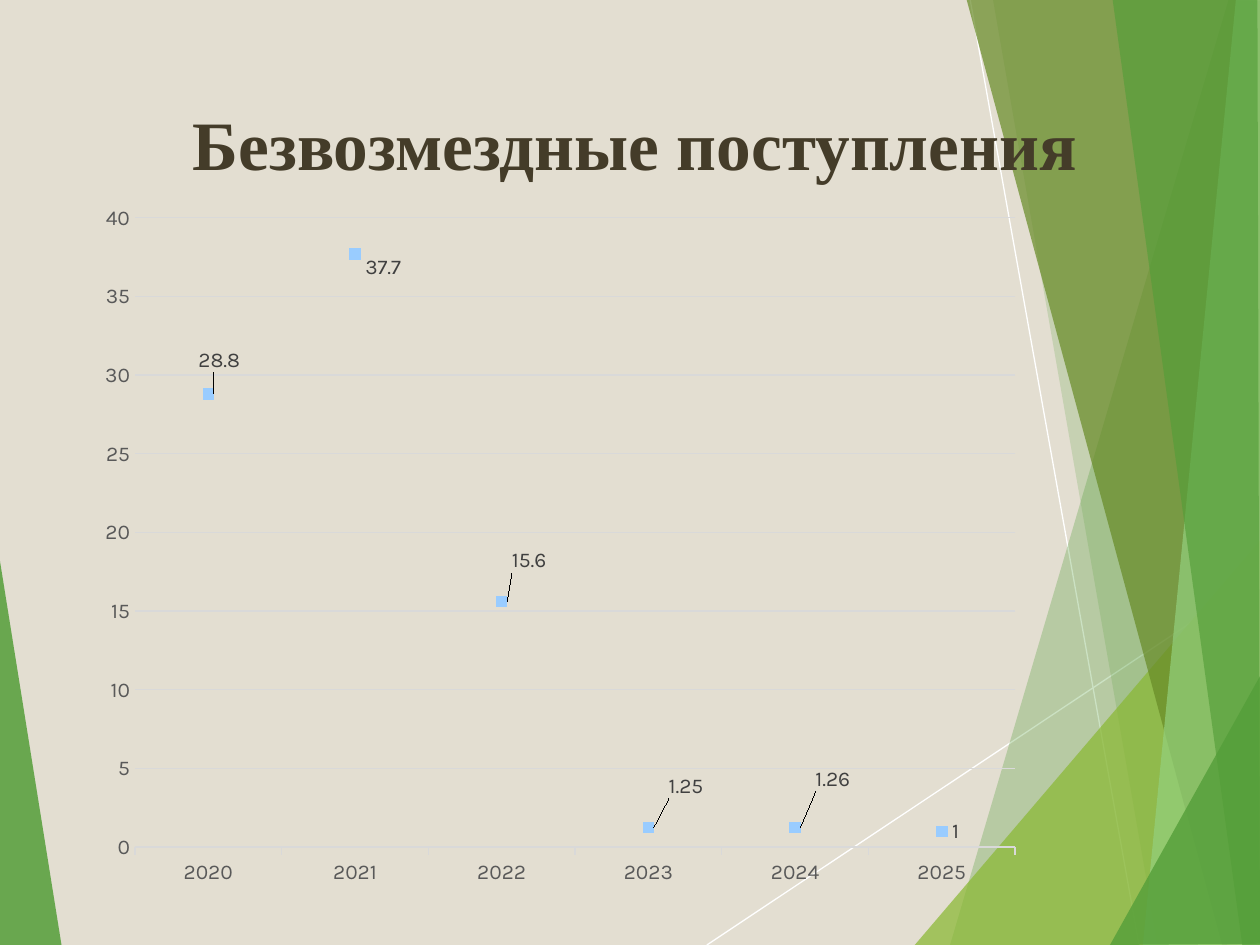
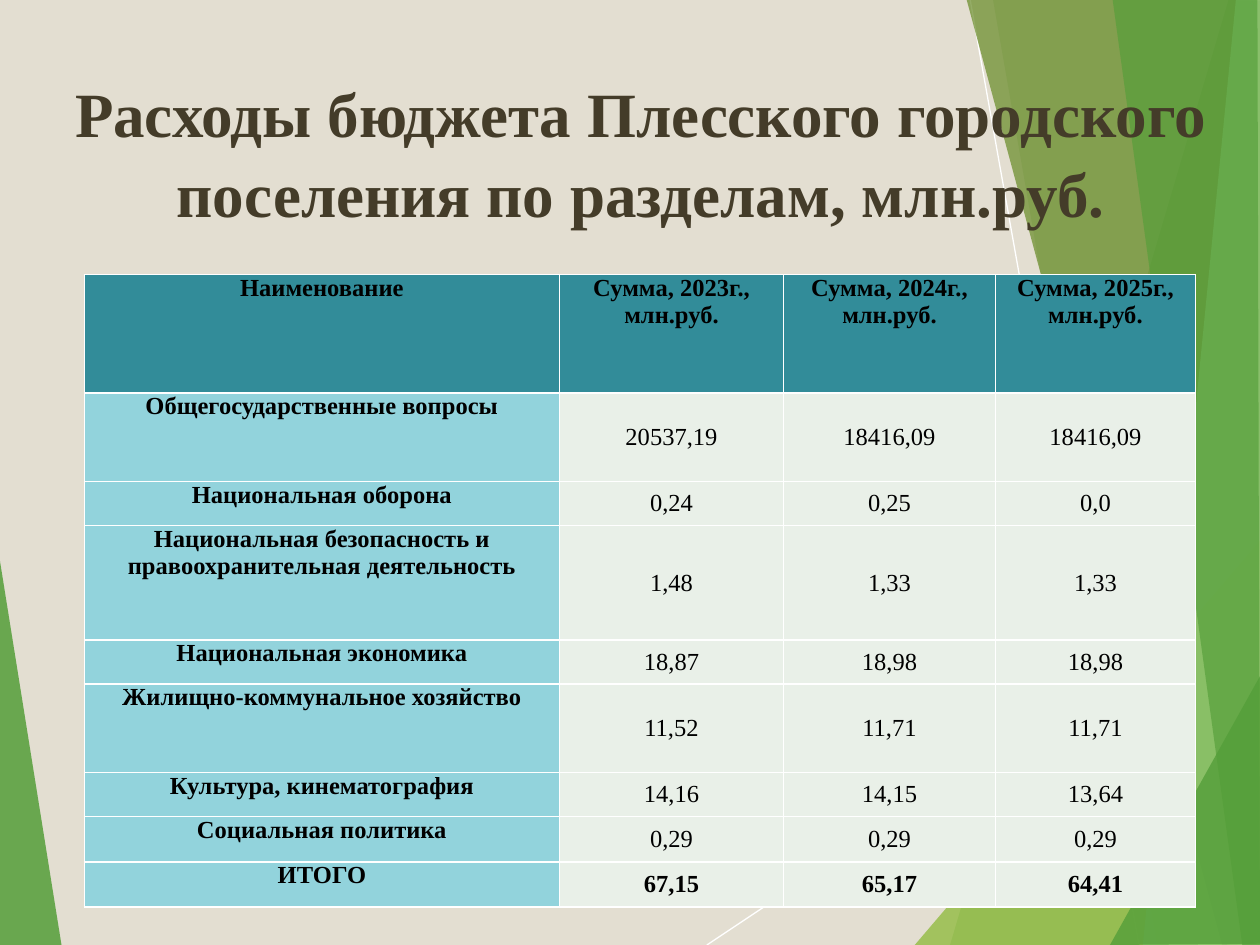
from dataclasses import dataclass

from lxml import etree
from pptx import Presentation
from pptx.chart.data import CategoryChartData
from pptx.dml.color import RGBColor
from pptx.enum.chart import XL_CHART_TYPE, XL_LABEL_POSITION, XL_MARKER_STYLE, XL_TICK_MARK
from pptx.enum.shapes import MSO_CONNECTOR
from pptx.enum.text import MSO_ANCHOR, MSO_AUTO_SIZE, PP_ALIGN
from pptx.oxml.ns import qn
from pptx.util import Inches, Pt

CENTER = PP_ALIGN.CENTER
TOP, MIDDLE = MSO_ANCHOR.TOP, MSO_ANCHOR.MIDDLE
NO_AUTOFIT = MSO_AUTO_SIZE.NONE
LINE_MARKERS = XL_CHART_TYPE.LINE_MARKERS
SQUARE = XL_MARKER_STYLE.SQUARE
LABEL_RIGHT = XL_LABEL_POSITION.RIGHT
TICK_NONE, TICK_OUT = XL_TICK_MARK.NONE, XL_TICK_MARK.OUTSIDE
STRAIGHT = MSO_CONNECTOR.STRAIGHT


@dataclass(frozen=True)
class Theme:
    background: str = "E3DED1"
    title: str = "443C29"
    white: str = "FFFFFF"
    black: str = "000000"
    green: str = "549E39"
    lime: str = "8AB833"
    olive: str = "678A26"
    mint: str = "93D07D"
    marker: str = "99CCFF"
    grid: str = "D9D9D9"
    axis_text: str = "595959"
    label_text: str = "404040"
    table_head: str = "328C99"
    table_name: str = "92D3DC"
    table_value: str = "E9F0E8"
    serif: str = "Times New Roman"
    sans: str = "Karla"
    grants_title_size: float = 39.6
    spending_title_size: float = 36
    table_size: float = 14
    chart_size: float = 12
    hairline: float = 0.75


THEME = Theme()

# Shared background: line ends, then ribbons as colour, opacity %, corners
LINES = [((5.61, 7.5), (10.01, 4.57)), ((7.7, 0), (9.04, 7.5))]
RIBBONS = [
    (THEME.green, 85, [(-0.01, 4.39), (0.49, 7.51), (-0.01, 7.5)]),
    (THEME.green, 30, [(9.75, 0), (7.54, 7.5), (10.02, 7.51), (10.01, 0.01)]),
    (THEME.green, 20, [(7.88, -0.01), (9.19, 7.5), (10.01, 7.5), (10.01, -0.01)]),
    (THEME.lime, 72, [(7.26, 7.5), (10, 4.29), (10.01, 7.5)]),
    (THEME.olive, 70, [(7.67, -0.01), (9.7, 7.5), (10.01, 7.49), (10.01, -0.01)]),
    (THEME.mint, 70, [(9.81, -0.01), (9.07, 7.5), (10.01, 7.5), (10, -0.01)]),
    (THEME.green, 65, [(8.83, -0.01), (9.86, 7.5), (10, 7.5), (9.98, -0.01)]),
    (THEME.green, 80, [(8.81, 7.5), (10.01, 5.35), (10.01, 7.49)]),
]

# Slide 1: grants
GRANTS_TITLE = "Безвозмездные поступления"
GRANTS = {"2020": 28.8, "2021": 37.7, "2022": 15.6, "2023": 1.25, "2024": 1.26, "2025": 1}
PLOT_LAYOUT = {"layoutTarget": "inner", "xMode": "edge", "yMode": "edge",
               "x": 0.05, "y": 0.02, "w": 0.87, "h": 0.92}
LABEL_SHIFTS = [(-0.02, -0.05), (0, 0.02), (0, -0.06), (0.01, -0.06), (0.01, -0.07)]

# Slide 2: spending
SPENDING_TITLE = "Расходы бюджета Плесского городского поселения по разделам, млн.руб."
SPENDING = [
    ("Наименование", "Сумма, 2023г., млн.руб.", "Сумма, 2024г., млн.руб.", "Сумма, 2025г., млн.руб."),
    ("Общегосударственные вопросы", "20537,19", "18416,09", "18416,09"),
    ("Национальная оборона", "0,24", "0,25", "0,0"),
    ("Национальная безопасность и правоохранительная деятельность", "1,48", "1,33", "1,33"),
    ("Национальная экономика", "18,87", "18,98", "18,98"),
    ("Жилищно-коммунальное хозяйство", "11,52", "11,71", "11,71"),
    ("Культура, кинематография", "14,16", "14,15", "13,64"),
    ("Социальная политика", "0,29", "0,29", "0,29"),
    ("ИТОГО", "67,15", "65,17", "64,41"),
]
COLUMN_WIDTHS = [3.77, 1.78, 1.68, 1.59]
ROW_HEIGHTS = [0.94, 0.7, 0.35, 0.91, 0.35, 0.7, 0.35, 0.36, 0.36]


def rgb(color):
    return RGBColor.from_string(color)


def inches(*lengths):
    return [Inches(length) for length in lengths]


def paint(target, color):
    target.fill.solid()
    target.fill.fore_color.rgb = rgb(color)


def set_font(font, name, size, color, bold=False):
    font.name, font.size, font.bold = name, Pt(size), bold
    font.color.rgb = rgb(color)


def set_line(line, color):
    line.color.rgb = rgb(color)
    line.width = Pt(THEME.hairline)


def draw_background(page):
    """Draw the lines and ribbons and return their elements."""
    elements = []
    for start, end in LINES:
        line = page.shapes.add_connector(STRAIGHT, *inches(*start, *end))
        set_line(line.line, THEME.white)
        etree.SubElement(line.element.spPr, qn("a:effectLst"))
        elements.append(line.element)
    for color, opacity, corners in RIBBONS:
        first, *others = [inches(*corner) for corner in corners]
        builder = page.shapes.build_freeform(*first)
        builder.add_line_segments(others)
        ribbon = builder.convert_to_shape()
        ribbon.shadow.inherit = False
        ribbon.line.fill.background()
        paint(ribbon, color)
        color_element = ribbon.element.spPr.find(qn("a:solidFill"))[0]
        etree.SubElement(color_element, qn("a:alpha"), val=str(opacity * 1000))
        elements.append(ribbon.element)
    return elements


def set_up_layout(layout, page):
    """Place the shared background behind the layout's title."""
    paint(layout.background, THEME.background)
    title_index = 0
    for holder in list(layout.placeholders):
        if holder.placeholder_format.idx != title_index:
            holder.element.getparent().remove(holder.element)
    title_element = layout.placeholders[0].element
    for element in draw_background(page):
        title_element.addprevious(element)


def set_title(page, text, place, size):
    box = page.shapes.title
    box.left, box.top, box.width, box.height = inches(*place)
    frame = box.text_frame
    frame.text = text
    frame.word_wrap = True
    frame.auto_size = NO_AUTOFIT
    frame.vertical_anchor = MIDDLE
    para = frame.paragraphs[0]
    para.alignment = CENTER
    para.line_spacing = 1.06
    set_font(para.font, THEME.serif, size, THEME.title, True)


def manual_layout(values):
    layout = etree.Element(qn("c:layout"))
    manual = etree.SubElement(layout, qn("c:manualLayout"))
    for name, value in values.items():
        etree.SubElement(manual, qn("c:" + name), val=str(value))
    return layout


def add_grants_chart(page):
    data = CategoryChartData()
    data.categories = list(GRANTS)
    data.add_series("Series 1", list(GRANTS.values()))
    chart = page.shapes.add_chart(LINE_MARKERS, *inches(0.67, 1.62, 8.03, 5.43), data).chart
    chart.has_legend = chart.has_title = False
    set_font(chart.font, THEME.sans, THEME.chart_size, THEME.black)
    plot = chart.plots[0]
    plot.vary_by_categories = False

    # Axes
    years, amounts = chart.category_axis, chart.value_axis
    for axis in (years, amounts):
        set_font(axis.tick_labels.font, THEME.sans, THEME.chart_size, THEME.axis_text)
    years.major_tick_mark = TICK_OUT
    set_line(years.format.line, THEME.grid)
    amounts.minimum_scale, amounts.maximum_scale, amounts.major_unit = 0, 40, 5
    amounts.major_tick_mark = TICK_NONE
    amounts.format.line.fill.background()
    set_line(amounts.major_gridlines.format.line, THEME.grid)

    # Markers without a joining line
    series = plot.series[0]
    series.smooth = False
    series.format.line.fill.background()
    series.marker.style, series.marker.size = SQUARE, 6
    paint(series.marker.format, THEME.marker)
    series.marker.format.line.fill.background()

    # Value labels, most of them shifted from their points
    series.data_labels.show_value = True
    point_labels = [series.points[index].data_label for index in range(len(LABEL_SHIFTS))]
    for label in [series.data_labels, *point_labels]:
        set_font(label.font, THEME.sans, THEME.chart_size, THEME.label_text)
        label.position = LABEL_RIGHT
    root = chart.element
    label_elements = list(root.iter(qn("c:dLbl")))
    for element, (shift_x, shift_y) in zip(label_elements, LABEL_SHIFTS):
        element.find(qn("c:idx")).addnext(manual_layout({"x": shift_x, "y": shift_y}))

    # Plot area
    plot_area = next(root.iter(qn("c:plotArea")))
    for old in plot_area.findall(qn("c:layout")):
        plot_area.remove(old)
    plot_area.insert(0, manual_layout(PLOT_LAYOUT))


def add_borders(cell, color):
    properties = cell._tc.get_or_add_tcPr()
    for index, side in enumerate(("lnL", "lnR", "lnT", "lnB")):
        border = etree.Element(qn("a:" + side), w=str(Pt(1)))
        fill = etree.SubElement(border, qn("a:solidFill"))
        etree.SubElement(fill, qn("a:srgbClr"), val=color)
        properties.insert(index, border)


def add_spending_table(page):
    place = inches(0.67, 2.18, sum(COLUMN_WIDTHS), sum(ROW_HEIGHTS))
    table = page.shapes.add_table(len(SPENDING), len(COLUMN_WIDTHS), *place).table
    for column, width in zip(table.columns, COLUMN_WIDTHS):
        column.width = Inches(width)
    for row, height in zip(table.rows, ROW_HEIGHTS):
        row.height = Inches(height)
    last_row = len(SPENDING) - 1
    for row_index, texts in enumerate(SPENDING):
        for column_index, text in enumerate(texts):
            cell = table.cell(row_index, column_index)
            is_head, is_name = row_index == 0, column_index == 0
            is_value = not (is_head or is_name)
            cell.text = text
            cell.margin_left = cell.margin_right = cell.margin_top = cell.margin_bottom = 0
            cell.vertical_anchor = MIDDLE if is_value else TOP
            paint(cell, THEME.table_head if is_head else
                  THEME.table_name if is_name else THEME.table_value)
            add_borders(cell, THEME.white)
            para = cell.text_frame.paragraphs[0]
            para.alignment = CENTER
            bold = not is_value or row_index == last_row
            set_font(para.font, THEME.serif, THEME.table_size, THEME.black, bold)


def main():
    deck = Presentation()
    deck.slide_width, deck.slide_height = inches(10, 7.5)
    layout = deck.slide_layouts.get_by_name("Title Only")
    grants_page = deck.slides.add_slide(layout)
    spending_page = deck.slides.add_slide(layout)
    set_up_layout(layout, grants_page)

    set_title(grants_page, GRANTS_TITLE, (0.67, 0.67, 8.74, 0.88), THEME.grants_title_size)
    add_grants_chart(grants_page)

    set_title(spending_page, SPENDING_TITLE, (0.28, 0.52, 9.61, 1.34), THEME.spending_title_size)
    add_spending_table(spending_page)
    deck.save("out.pptx")


if __name__ == "__main__":
    main()
